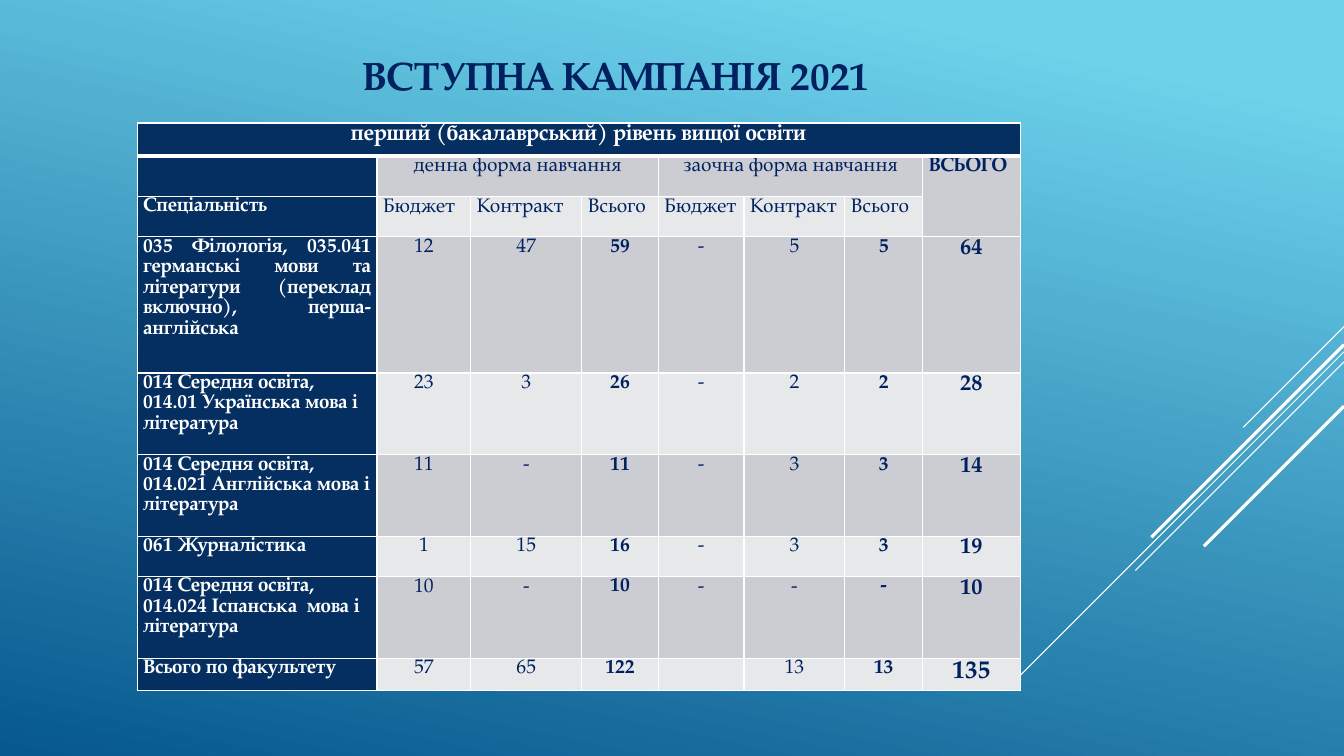
from lxml.etree import SubElement
from pptx import Presentation
from pptx.dml.color import RGBColor
from pptx.enum.shapes import MSO_CONNECTOR
from pptx.enum.text import MSO_ANCHOR, PP_ALIGN
from pptx.oxml import parse_xml
from pptx.oxml.ns import nsdecls, qn
from pptx.util import Inches, Pt

FONT = "TeX Gyre Pagella"
WHITE = RGBColor(0xFF, 0xFF, 0xFF)
INK = RGBColor(0x00, 0x20, 0x60)
NAVY = RGBColor(0x05, 0x2F, 0x61)
SKY = RGBColor(0x6E, 0xD2, 0xEB)
DEEP_BLUE = RGBColor(0x06, 0x58, 0x8E)
BANDS = (RGBColor(0xE7, 0xE8, 0xEA), RGBColor(0xCC, 0xCD, 0xD2))

SLIDE_WIDTH, SLIDE_HEIGHT = 13.33, 7.5
TABLE_LEFT, TABLE_TOP = 1.36, 1.22
COLUMN_WIDTHS = (2.38, 0.93, 1.1, 0.76, 0.85, 1, 0.77, 0.97)
ROW_HEIGHTS = (0.33, 0.4, 0.4, 1.35, 0.81, 0.81, 0.4, 0.81, 0.32)
FIRST_DATA_ROW = 3
SUBTOTAL_COLUMNS = (3, 6)
TOTAL_COLUMN = 7

# Height on the right edge, horizontal reach, weight in points
RAYS = (
    (3.24, 1, 0.75),
    (3.49, 3.26, 0.75),
    (3.59, 2.07, 0.75),
    (3.42, 1.91, 2.25),
    (4.03, 1.39, 2.25),
)

ADMISSIONS = (
    ("перший (бакалаврський) рівень вищої освіти", "", "", "", "", "", "", ""),
    ("", "денна форма навчання", "", "", "заочна форма навчання", "", "", "ВСЬОГО"),
    ("Спеціальність", "Бюджет", "Контракт", "Всього", "Бюджет", "Контракт", "Всього", ""),
    ("035 Філологія, 035.041 германські мови та літератури (переклад включно), перша-англійська",
     "12", "47", "59", "-", "5", "5", "64"),
    ("014 Середня освіта, 014.01 Українська мова і література",
     "23", "3", "26", "-", "2", "2", "28"),
    ("014 Середня освіта, 014.021 Англійська мова і література",
     "11", "-", "11", "-", "3", "3", "14"),
    ("061 Журналістика", "1", "15", "16", "-", "3", "3", "19"),
    ("014 Середня освіта, 014.024 Іспанська  мова і література",
     "10", "-", "10", "-", "-", "-", "10"),
    ("Всього по факультету", "57", "65", "122", "", "13", "13", "135"),
)
# First row, first column, last row, last column
MERGES = ((0, 0, 0, 7), (1, 1, 1, 3), (1, 4, 1, 6), (1, 7, 2, 7))


def paint_background(slide):
    fill = slide.background.fill
    fill.gradient()
    fill.gradient_angle = 258
    for stop, position, color in zip(fill.gradient_stops, (0.1, 1), (SKY, DEEP_BLUE)):
        stop.position = position
        stop.color.rgb = color


def add_ray(slide, height, reach, weight):
    """Draw a 45-degree line falling leftwards from the slide's right edge."""
    ray = slide.shapes.add_connector(
        MSO_CONNECTOR.STRAIGHT, Inches(SLIDE_WIDTH), Inches(height),
        Inches(SLIDE_WIDTH - reach), Inches(height + reach))
    ray.line.color.rgb = WHITE
    ray.line.width = Pt(weight)
    SubElement(ray._element.spPr, qn("a:effectLst"))


def style_paragraph(paragraph, size, color, bold, alignment):
    paragraph.alignment = alignment
    paragraph.line_spacing = 1.07
    paragraph.space_after = Pt(8)
    font = paragraph.font
    font.name, font.size, font.bold = FONT, Pt(size), bold
    font.color.rgb = color


def set_title(slide):
    title = slide.shapes.title
    title.left, title.top = Inches(1.08), Inches(0.43)
    title.width, title.height = Inches(10.06), Inches(1.2)
    frame = title.text_frame
    frame.text = "ВСТУПНА КАМПАНІЯ 2021"
    frame.word_wrap = True
    frame.vertical_anchor = MSO_ANCHOR.TOP
    style_paragraph(frame.paragraphs[0], 28, INK, True, PP_ALIGN.CENTER)


def set_borders(cell, row):
    thick_side = {0: "lnB", 1: "lnT"}.get(row)
    properties = cell._tc.get_or_add_tcPr()
    for index, side in enumerate(("lnL", "lnR", "lnT", "lnB")):
        width = Pt(3 if side == thick_side else 1)
        properties.insert(index, parse_xml(
            f'<a:{side} {nsdecls("a")} w="{width}"><a:solidFill>'
            f'<a:srgbClr val="{WHITE}"/></a:solidFill></a:{side}>'))


def text_size(row, column):
    if row == len(ADMISSIONS) - 1 and column == TOTAL_COLUMN:
        return 18
    if row == 0 or (row >= FIRST_DATA_ROW and column == TOTAL_COLUMN):
        return 16
    return 14


def text_alignment(row, column):
    if row == FIRST_DATA_ROW and column == 0:
        return PP_ALIGN.JUSTIFY
    if row == 2 or (row > 0 and column == 0) or (row == 1 and column == TOTAL_COLUMN):
        return PP_ALIGN.LEFT
    return PP_ALIGN.CENTER


def fill_cell(cell, row, column, text):
    is_heading = row == 0 or column == 0
    is_sum = column == TOTAL_COLUMN or (
        row >= FIRST_DATA_ROW and column in SUBTOTAL_COLUMNS)
    cell.text = text
    cell.margin_left = cell.margin_right = Inches(0.06)
    cell.margin_top = cell.margin_bottom = 0
    cell.fill.solid()
    cell.fill.fore_color.rgb = NAVY if is_heading else BANDS[row % 2]
    set_borders(cell, row)
    style_paragraph(cell.text_frame.paragraphs[0], text_size(row, column),
                    WHITE if is_heading else INK, is_heading or is_sum,
                    text_alignment(row, column))


def add_admissions_table(slide):
    table = slide.shapes.add_table(
        len(ROW_HEIGHTS), len(COLUMN_WIDTHS), Inches(TABLE_LEFT), Inches(TABLE_TOP),
        Inches(sum(COLUMN_WIDTHS)), Inches(sum(ROW_HEIGHTS))).table
    table.horz_banding = False
    for column, width in zip(table.columns, COLUMN_WIDTHS):
        column.width = Inches(width)
    for row, height in zip(table.rows, ROW_HEIGHTS):
        row.height = Inches(height)
    for row, texts in enumerate(ADMISSIONS):
        for column, text in enumerate(texts):
            fill_cell(table.cell(row, column), row, column, text)
    for top, left, bottom, right in MERGES:
        table.cell(top, left).merge(table.cell(bottom, right))


def main():
    presentation = Presentation()
    presentation.slide_width = Inches(SLIDE_WIDTH)
    presentation.slide_height = Inches(SLIDE_HEIGHT)
    slide = presentation.slides.add_slide(presentation.slide_layouts[5])
    paint_background(slide)
    for ray in RAYS:
        add_ray(slide, *ray)
    set_title(slide)
    add_admissions_table(slide)
    presentation.save("out.pptx")


if __name__ == "__main__":
    main()
